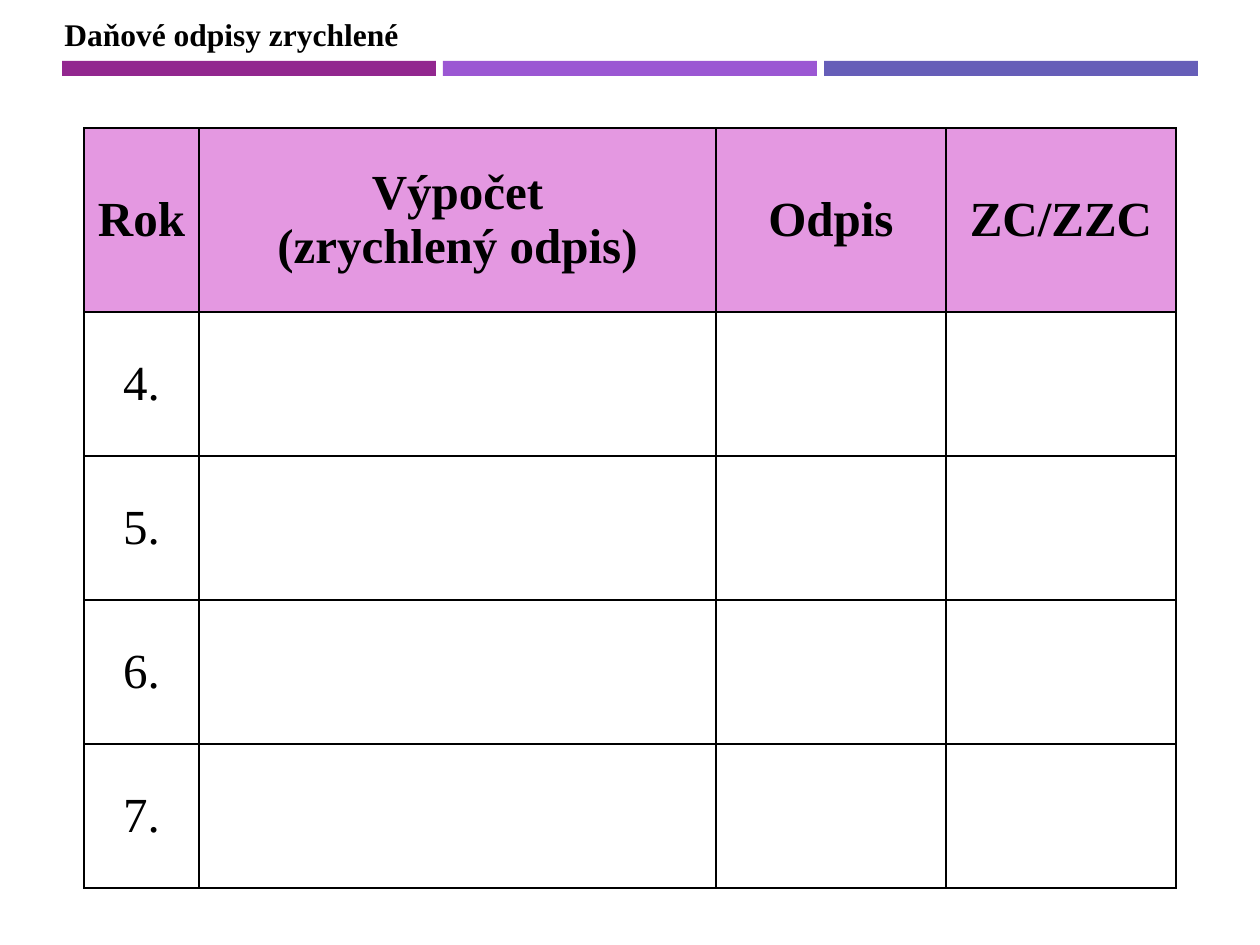
from lxml import etree
from pptx import Presentation
from pptx.dml.color import RGBColor
from pptx.enum.shapes import MSO_SHAPE as SHAPE
from pptx.enum.text import MSO_ANCHOR as ANCHOR, MSO_AUTO_SIZE as AUTO, PP_ALIGN as ALIGN
from pptx.oxml.ns import qn
from pptx.util import Emu, Pt

EMU_PER_PX = 914400 / 126
BARS = ["92278F", "9B57D3", "665EB8"]
HEADER = ["Rok", "Výpočet\n(zrychlený odpis)", "Odpis", "ZC/ZZC"]
YEARS = ["4.", "5.", "6.", "7."]
COLS = [115, 517, 230, 230]
ROWS = [184] + [144] * len(YEARS)


def px(n):
    return Emu(round(n * EMU_PER_PX))


def rgb(color):
    return RGBColor.from_string(color)


def apply(obj, values):
    for name, value in values.items():
        setattr(obj, name, value)


class Deck:
    font = "Times New Roman"
    ink = "000000"
    header_fill = "E498E1"

    def __init__(self, width, height):
        self.prs = Presentation()
        apply(self.prs, {"slide_width": px(width), "slide_height": px(height)})
        self.s = self.prs.slides.add_slide(self.prs.slide_layouts[6])

    def add_text(self, tf, text, size, bold, align):
        for i, line in enumerate(text.split("\n")):
            p = tf.add_paragraph() if i else tf.paragraphs[0]
            p.alignment = align
            r = p.add_run()
            r.text = line
            apply(r.font, {"name": self.font, "size": Pt(size), "bold": bold})
            r.font.color.rgb = rgb(self.ink)

    def bar(self, x, y, w, h, color):
        sp = self.s.shapes.add_shape(SHAPE.RECTANGLE, px(x), px(y), px(w), px(h))
        sp.shadow.inherit = False
        sp.fill.solid()
        sp.fill.fore_color.rgb = rgb(color)
        sp.line.fill.background()

    def title(self, x, y, w, h, text):
        tf = self.s.shapes.add_textbox(px(x), px(y), px(w), px(h)).text_frame
        apply(tf, {"word_wrap": False, "auto_size": AUTO.SHAPE_TO_FIT_TEXT})
        self.add_text(tf, text, 18, True, ALIGN.LEFT)

    def borders(self, cell):
        tc_pr = cell._tc.get_or_add_tcPr()
        for i, side in enumerate(["a:lnL", "a:lnR", "a:lnT", "a:lnB"]):
            ln = etree.Element(qn(side), w=str(Pt(1)))
            fill = etree.SubElement(ln, qn("a:solidFill"))
            etree.SubElement(fill, qn("a:srgbClr"), val=self.ink)
            tc_pr.insert(i, ln)

    def table(self, x, y, cols, rows, cells):
        tbl = self.s.shapes.add_table(len(rows), len(cols), px(x), px(y),
                                      px(sum(cols)), px(sum(rows))).table
        apply(tbl, {"first_row": False, "horz_banding": False})
        for col, w in zip(tbl.columns, cols):
            col.width = px(w)
        for row, h in zip(tbl.rows, rows):
            row.height = px(h)
        for i, texts in enumerate(cells):
            for j, text in enumerate(texts):
                cell = tbl.cell(i, j)
                apply(cell, {"vertical_anchor": ANCHOR.MIDDLE, "margin_left": px(9),
                             "margin_right": px(9), "margin_top": 0, "margin_bottom": 0})
                if i == 0:
                    cell.fill.solid()
                    cell.fill.fore_color.rgb = rgb(self.header_fill)
                else:
                    cell.fill.background()
                self.borders(cell)
                if text:
                    self.add_text(cell.text_frame, text, 28, i == 0, ALIGN.CENTER)


def main():
    deck = Deck(1260, 945)
    for i, color in enumerate(BARS):
        deck.bar(62 + 381 * i, 61, 374, 15, color)
    deck.title(52, 9, 363, 50, "Daňové odpisy zrychlené")
    cells = [HEADER] + [[year, "", "", ""] for year in YEARS]
    deck.table(84, 128, COLS, ROWS, cells)
    deck.prs.save("out.pptx")


if __name__ == "__main__":
    main()
